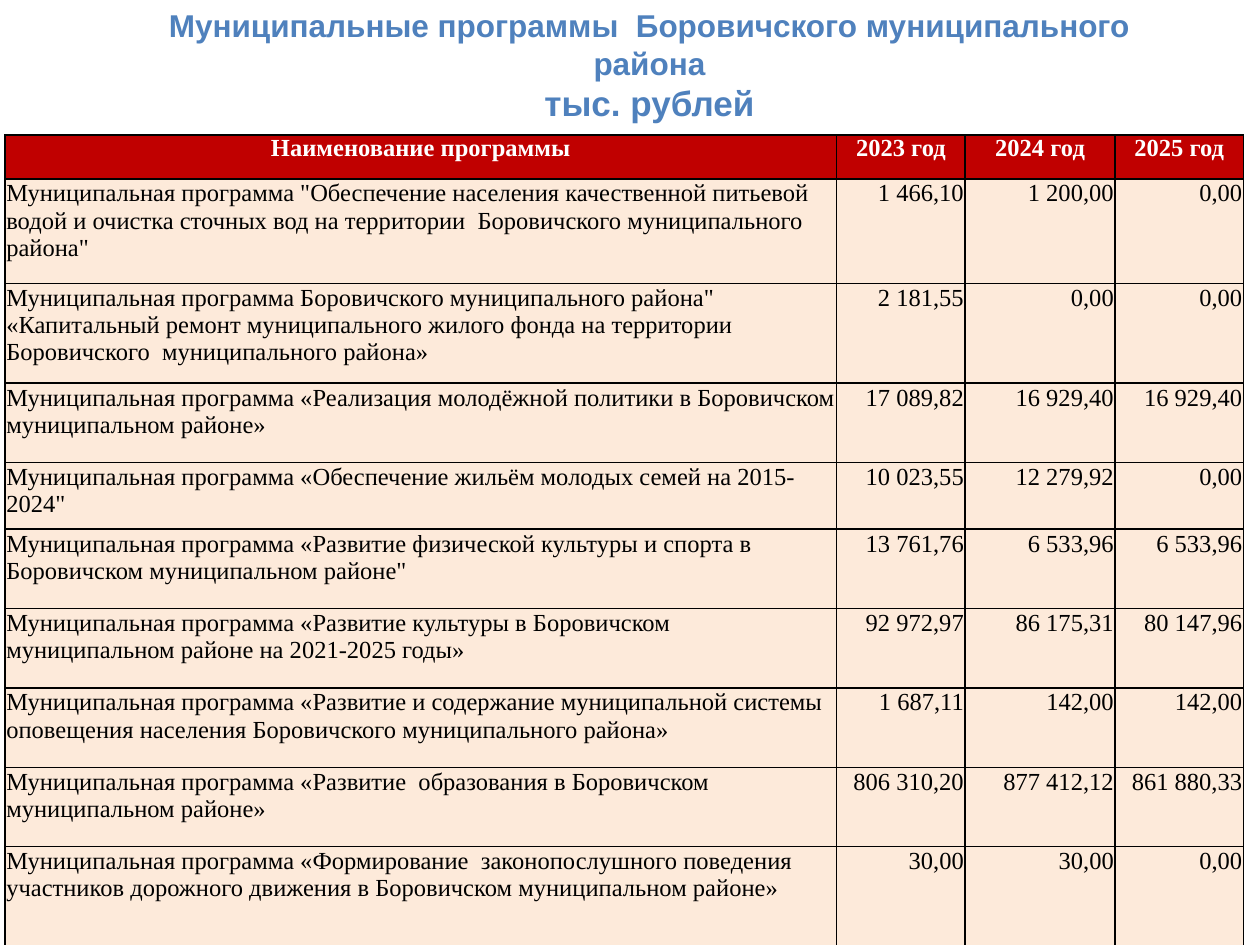
from lxml.etree import SubElement
from pptx import Presentation
from pptx.dml.color import RGBColor
from pptx.enum.text import MSO_ANCHOR, MSO_AUTO_SIZE, PP_ALIGN
from pptx.oxml.ns import qn
from pptx.util import Inches, Pt

BLUE = RGBColor(0x4F, 0x81, 0xBD)
RED = RGBColor(0xC0, 0x00, 0x00)
CREAM = RGBColor(0xFD, 0xEA, 0xDA)
WHITE = RGBColor(0xFF, 0xFF, 0xFF)
BLACK = RGBColor(0x00, 0x00, 0x00)

TITLE = [
    ("Муниципальные программы  Боровичского муниципального района", 18),
    ("тыс. рублей", 20),
]
HEADER = ("Наименование программы", "2023 год", "2024 год", "2025 год")
PROGRAMMES = [
    ('Муниципальная программа "Обеспечение населения качественной питьевой водой и очистка '
     'сточных вод на территории  Боровичского муниципального района"',
     "1 466,10", "1 200,00", "0,00"),
    ('Муниципальная программа Боровичского муниципального района"\n'
     "«Капитальный ремонт муниципального жилого фонда на территории "
     "Боровичского  муниципального района»",
     "2 181,55", "0,00", "0,00"),
    ("Муниципальная программа «Реализация молодёжной политики в Боровичском "
     "муниципальном районе»",
     "17 089,82", "16 929,40", "16 929,40"),
    ('Муниципальная программа «Обеспечение жильём молодых семей на 2015-2024"',
     "10 023,55", "12 279,92", "0,00"),
    ("Муниципальная программа «Развитие физической культуры и спорта в "
     'Боровичском муниципальном районе"',
     "13 761,76", "6 533,96", "6 533,96"),
    ("Муниципальная программа «Развитие культуры в Боровичском "
     "муниципальном районе на 2021-2025 годы»",
     "92 972,97", "86 175,31", "80 147,96"),
    ("Муниципальная программа «Развитие и содержание муниципальной системы "
     "оповещения населения Боровичского муниципального района»",
     "1 687,11", "142,00", "142,00"),
    ("Муниципальная программа «Развитие  образования в Боровичском "
     "муниципальном районе»",
     "806 310,20", "877 412,12", "861 880,33"),
    ("Муниципальная программа «Формирование  законопослушного поведения "
     "участников дорожного движения в Боровичском муниципальном районе»",
     "30,00", "30,00", "0,00"),
]
COLUMN_WIDTHS = (6.6, 1.02, 1.19, 1.02)
ROW_HEIGHTS = (0.35, 0.83, 0.79, 0.63, 0.53, 0.63, 0.63, 0.63, 0.63, 0.79)


class PageBuilder:
    title_font = "Arial"
    table_font = "Times New Roman"
    table_size = 14

    def __init__(self, page):
        self.page = page

    def format_text(self, para, font, size, color, bold, align):
        para.alignment = align
        for span in para.runs:
            span.font.name = font
            span.font.size = Pt(size)
            span.font.color.rgb = color
            span.font.bold = bold

    def add_title(self, lines, left, top, width, height):
        box = self.page.shapes.title
        box.left, box.top = Inches(left), Inches(top)
        box.width, box.height = Inches(width), Inches(height)
        frame = box.text_frame
        frame.text = "\n".join(text for text, size in lines)
        frame.word_wrap = True
        frame.auto_size = MSO_AUTO_SIZE.SHAPE_TO_FIT_TEXT
        frame.vertical_anchor = MSO_ANCHOR.TOP
        for para, (text, size) in zip(frame.paragraphs, lines):
            self.format_text(para, self.title_font, size, BLUE, True, PP_ALIGN.CENTER)

    def add_borders(self, cell):
        properties = cell._tc.get_or_add_tcPr()
        for side in ("a:lnL", "a:lnR", "a:lnT", "a:lnB"):
            line = SubElement(properties, qn(side), w=str(Pt(1)))
            fill = SubElement(line, qn("a:solidFill"))
            SubElement(fill, qn("a:srgbClr"), val=str(BLACK))

    def fill_cell(self, cell, text, is_header, is_name):
        cell.text = text
        self.add_borders(cell)
        cell.fill.solid()
        cell.fill.fore_color.rgb = RED if is_header else CREAM
        cell.margin_left = cell.margin_right = Inches(0.03 if is_header else 0.01)
        cell.margin_top = Inches(0 if is_header else 0.01)
        cell.margin_bottom = 0
        if is_header:
            align = PP_ALIGN.CENTER
        else:
            align = PP_ALIGN.LEFT if is_name else PP_ALIGN.RIGHT
        color = WHITE if is_header else BLACK
        for para in cell.text_frame.paragraphs:
            self.format_text(para, self.table_font, self.table_size, color, is_header, align)

    def add_table(self, rows, left, top, widths, heights):
        frame = self.page.shapes.add_table(
            len(rows), len(widths), Inches(left), Inches(top),
            Inches(sum(widths)), Inches(sum(heights)))
        table = frame.table
        table.horz_banding = False
        for column, width in zip(table.columns, widths):
            column.width = Inches(width)
        for row, height in zip(table.rows, heights):
            row.height = Inches(height)
        for i, values in enumerate(rows):
            for j, text in enumerate(values):
                self.fill_cell(table.cell(i, j), text, i == 0, j == 0)


def main():
    deck = Presentation()
    deck.slide_width, deck.slide_height = Inches(10), Inches(7.5)
    builder = PageBuilder(deck.slides.add_slide(deck.slide_layouts[5]))

    # Heading with the unit of measure
    builder.add_title(TITLE, 0.98, 0, 8.35, 1.04)

    # Programme budgets by year
    builder.add_table([HEADER, *PROGRAMMES], 0.04, 1.07, COLUMN_WIDTHS, ROW_HEIGHTS)

    deck.save("out.pptx")


if __name__ == "__main__":
    main()
